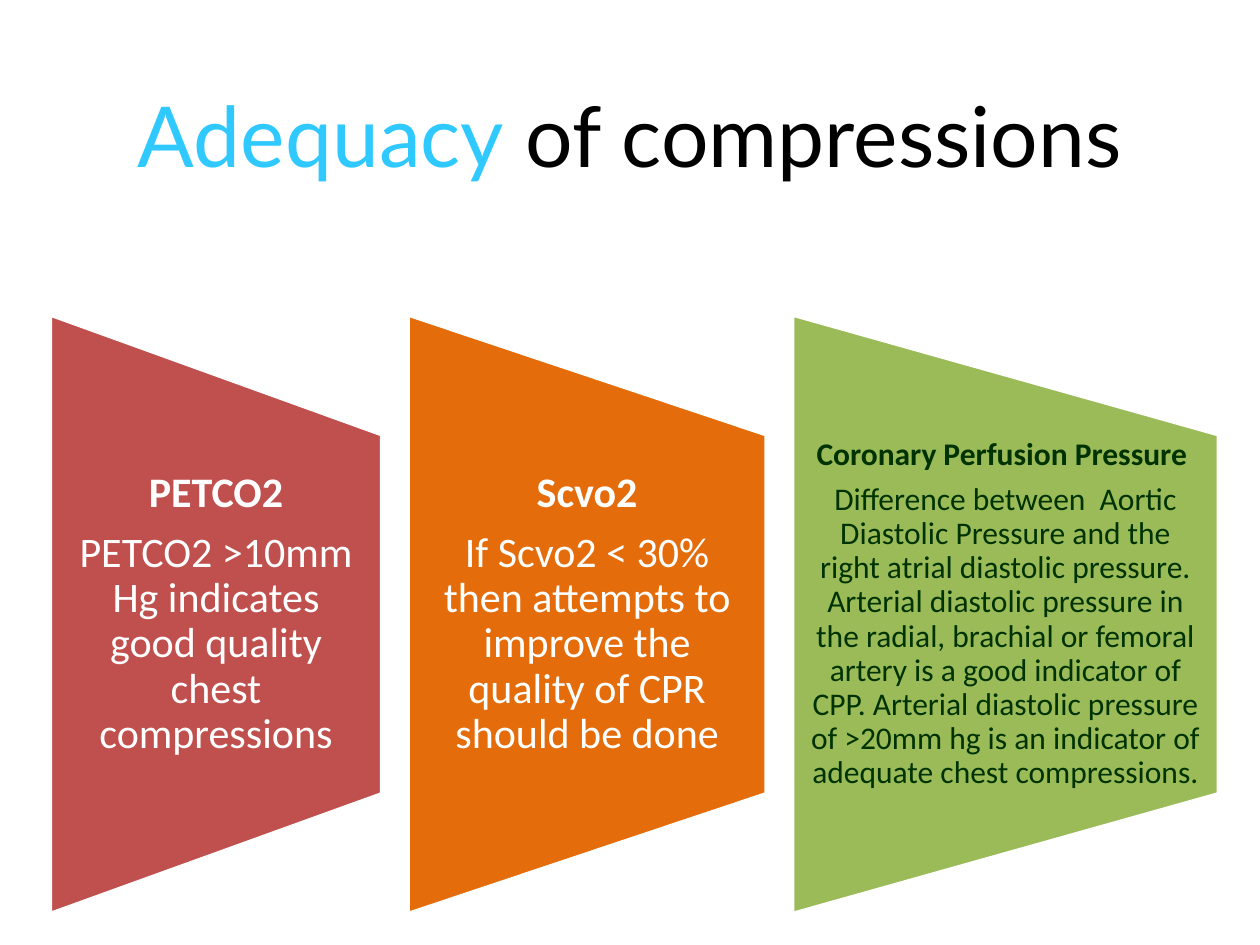
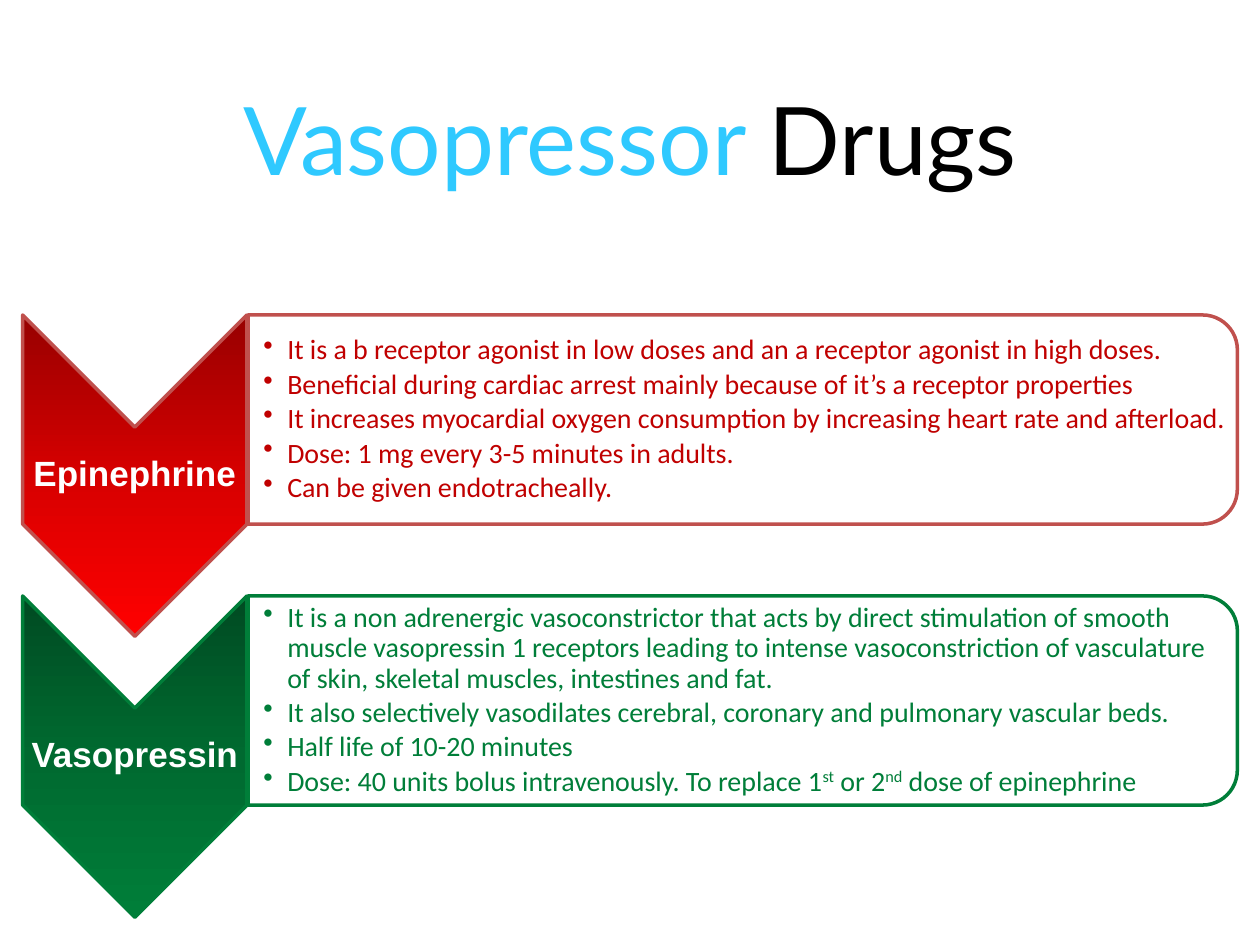
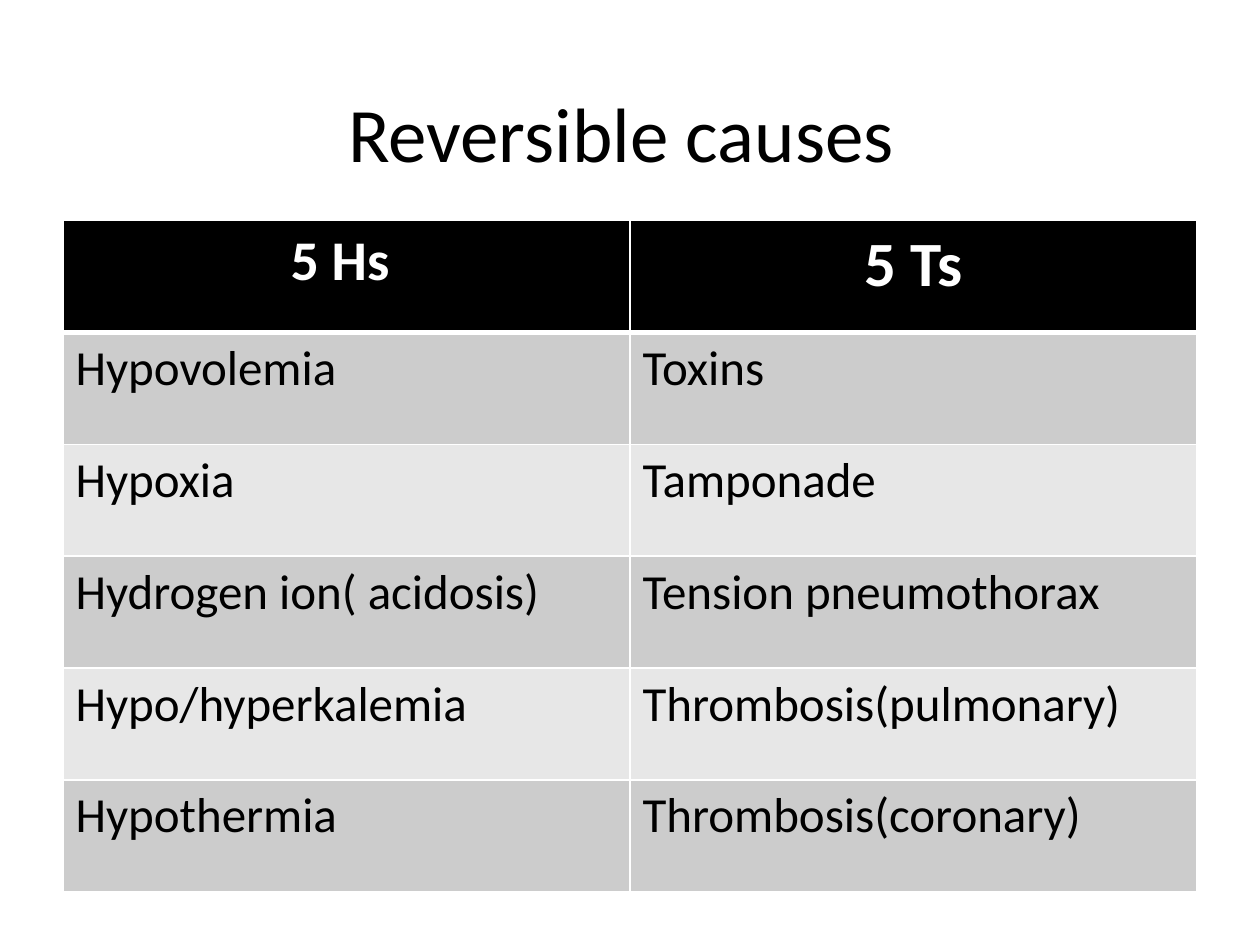
from copy import deepcopy

from lxml import etree
from pptx import Presentation
from pptx.dml.color import RGBColor
from pptx.enum.shapes import MSO_SHAPE
from pptx.enum.text import MSO_ANCHOR, PP_ALIGN
from pptx.oxml.ns import qn
from pptx.util import Inches, Pt

TRAPEZOID = MSO_SHAPE.FLOWCHART_MANUAL_OPERATION
CHEVRON = MSO_SHAPE.CHEVRON
ROUNDED_PANEL = MSO_SHAPE.ROUND_2_SAME_RECTANGLE
LEFT, CENTER = PP_ALIGN.LEFT, PP_ALIGN.CENTER
TOP, MIDDLE = MSO_ANCHOR.TOP, MSO_ANCHOR.MIDDLE


class Theme:
    accent = "2FC9FF"
    black, white = "000000", "FFFFFF"
    red, orange, lime = "C0504D", "E46C0A", "9BBB59"
    forest, crimson, green = "003300", "C00000", "007E39"
    red_fade = ("970000", "D70000", "FF0000")
    green_fade = ("004B22", "006A30", "007E39")
    stripes = ("E7E7E7", "CCCCCC")
    title_font, body_font, label_font = "Lato", "Calibri", "Arial"
    card, dense_card, drug, bullet = 24, 18, 20, 16
    left_header, right_header, cell = 32, 36, 28
    outline = 2


def write(frame, paragraphs, *, size, color, font=Theme.body_font, bold=False,
          align=LEFT, anchor=MIDDLE, margins=None, leading=None, after=0, bullet=False):
    """Fill a frame; a paragraph is a list of runs, each (text, overrides).

    Overrides are color, bold and superscript; after is a share of the type size.
    """
    frame.word_wrap = True
    frame.vertical_anchor = anchor
    if margins:
        (frame.margin_left, frame.margin_top,
         frame.margin_right, frame.margin_bottom) = map(Inches, margins)
    for index, runs in enumerate(paragraphs):
        paragraph = frame.add_paragraph() if index else frame.paragraphs[0]
        paragraph.alignment = align
        if leading:
            paragraph.line_spacing = leading
            paragraph.space_after = Pt(size * after)
        if bullet:
            properties = paragraph._p.get_or_add_pPr()
            properties.set("marL", str(Inches(0.19)))
            properties.set("indent", str(Inches(-0.19)))
            etree.SubElement(properties, qn("a:buChar")).set("char", "•")
        for text, overrides in runs:
            run = paragraph.add_run()
            run.text = text
            run.font.name = font
            run.font.size = Pt(size)
            run.font.bold = overrides.get("bold", bold)
            run.font.color.rgb = RGBColor.from_string(overrides.get("color", color))
            if overrides.get("superscript"):
                run.font._element.set("baseline", "30000")


def add_turned(slide, preset, left, top, width, height, rotation, fills, line):
    """Add a quarter-turned shape that covers the given box as seen on the slide."""
    shape = slide.shapes.add_shape(
        preset, Inches(left + (width - height) / 2), Inches(top + (height - width) / 2),
        Inches(height), Inches(width))
    shape.rotation = rotation
    shape.shadow.inherit = False
    shape.line.color.rgb = RGBColor.from_string(line)
    shape.line.width = Pt(Theme.outline)
    if len(fills) == 1:
        shape.fill.solid()
        shape.fill.fore_color.rgb = RGBColor.from_string(fills[0])
        return shape
    shape.fill.gradient()
    shape.fill.gradient_angle = 270
    gradient = shape._element.spPr.find(qn("a:gradFill"))
    gradient.set("rotWithShape", "0")
    stops = gradient.find(qn("a:gsLst"))
    stops.insert(1, deepcopy(stops[0]))
    stops[1].set("pos", "50000")
    for stop, color in zip(shape.fill.gradient_stops, fills):
        stop.color.rgb = RGBColor.from_string(color)
    return shape


deck = Presentation()
deck.slide_width, deck.slide_height = Inches(10), Inches(7.5)
blank = deck.slide_layouts[6]

# Slides and their titles
titles = [
    ((0, 0.43, 10, 1.26), Theme.title_font, 48,
     [("Adequacy", {"color": Theme.accent}), (" of compressions", {})]),
    ((1, 0.46, 8, 1.26), Theme.title_font, 54,
     [("Vasopressor ", {"color": Theme.accent}), ("Drugs", {})]),
    ((0.5, 0.42, 9, 1.25), Theme.body_font, 44, [("Reversible causes ", {})]),
]
slides = []
for box, font, size, runs in titles:
    slide = deck.slides.add_slide(blank)
    slides.append(slide)
    title = slide.shapes.add_textbox(*map(Inches, box))
    write(title.text_frame, [runs], size=size, color=Theme.black, font=font, align=CENTER)
adequacy, vasopressors, causes = slides

# Measures of adequate compressions
measures = [
    (2.63, Theme.red, Theme.white, Theme.card, 0.17, "PETCO2",
     "PETCO2 >10mm Hg indicates good quality chest compressions"),
    (2.84, Theme.orange, Theme.white, Theme.card, 0.17, "Scvo2",
     "If Scvo2 < 30% then attempts to improve the quality of CPR should be done"),
    (3.38, Theme.lime, Theme.forest, Theme.dense_card, 0.12, "Coronary Perfusion Pressure ",
     "Difference between  Aortic Diastolic Pressure and the right atrial diastolic pressure. "
     "Arterial diastolic pressure in the radial, brachial or femoral artery is a good "
     "indicator of CPP. Arterial diastolic pressure of >20mm hg is an indicator of "
     "adequate chest compressions."),
]
card_left, card_top, card_height, card_gap = 0.4, 2.5, 4.75, 0.21
for width, fill, ink, size, inset, heading, detail in measures:
    add_turned(adequacy, TRAPEZOID, card_left, card_top, width, card_height, 270,
               [fill], Theme.white)
    card_text = adequacy.shapes.add_textbox(
        Inches(card_left), Inches(card_top + card_height * 0.2),
        Inches(width), Inches(card_height * 0.6))
    write(card_text.text_frame, [[(heading, {"bold": True})], [(detail, {})]],
          size=size, color=ink, align=CENTER, margins=(inset, 0, inset, 0),
          leading=0.9, after=0.35)
    card_left += width + card_gap

# Vasopressor drugs
drugs = [
    ("Epinephrine", Theme.red_fade, Theme.red, Theme.crimson, [
        [("It is a b receptor agonist in low doses and an a receptor agonist in high doses.", {})],
        [("Beneficial during cardiac arrest mainly because of it’s a receptor properties", {})],
        [("It increases myocardial oxygen consumption by increasing heart rate and afterload.", {})],
        [("Dose: 1 mg every 3-5 minutes in adults.", {})],
        [("Can be given endotracheally.", {})],
    ]),
    ("Vasopressin", Theme.green_fade, Theme.green, Theme.green, [
        [("It is a non adrenergic vasoconstrictor that acts by direct stimulation of smooth "
          "muscle vasopressin 1 receptors leading to intense vasoconstriction of vasculature "
          "of skin, skeletal muscles, intestines and fat.", {})],
        [("It also selectively vasodilates cerebral, coronary and pulmonary vascular beds.", {})],
        [("Half life of 10-20 minutes", {})],
        [("Dose: 40 units bolus intravenously. To replace 1", {}), ("st", {"superscript": True}),
         (" or 2", {}), ("nd", {"superscript": True}), (" dose of epinephrine", {})],
    ]),
]
arrow_left, arrow_width, arrow_height = 0.18, 1.78, 2.55
panel_left, panel_width, panel_height, panel_inset = 1.97, 7.85, 1.66, 0.08
for row, (drug, fade, outline, ink, facts) in enumerate(drugs):
    top = 2.5 + row * 2.23
    add_turned(vasopressors, CHEVRON, arrow_left, top, arrow_width, arrow_height, 90,
               fade, outline)
    name = vasopressors.shapes.add_textbox(
        Inches(arrow_left), Inches(top + arrow_width / 2),
        Inches(arrow_width), Inches(arrow_height - arrow_width))
    write(name.text_frame, [[(drug, {})]], size=Theme.drug, color=Theme.white,
          font=Theme.label_font, bold=True, align=CENTER, margins=[0.01] * 4,
          leading=0.9, after=0.35)
    panel = add_turned(vasopressors, ROUNDED_PANEL, panel_left, top, panel_width,
                       panel_height, 90, [Theme.white], outline)
    panel_color = panel._element.spPr.find(qn("a:solidFill"))[0]
    etree.SubElement(panel_color, qn("a:alpha")).set("val", "90000")
    fact_list = vasopressors.shapes.add_textbox(
        Inches(panel_left), Inches(top + panel_inset),
        Inches(panel_width - panel_inset), Inches(panel_height - 2 * panel_inset))
    write(fact_list.text_frame, facts, size=Theme.bullet, color=ink,
          margins=(0.12, 0.01, 0.01, 0.01), leading=0.9, after=0.15, bullet=True)

# Reversible causes
cause_rows = [
    ("5 Hs ", "5 Ts"),
    ("Hypovolemia", "Toxins"),
    ("Hypoxia", "Tamponade"),
    ("Hydrogen ion( acidosis)", "Tension pneumothorax"),
    ("Hypo/hyperkalemia", "Thrombosis(pulmonary)"),
    ("Hypothermia", "Thrombosis(coronary)"),
]
table = causes.shapes.add_table(
    len(cause_rows), 2, Inches(0.5), Inches(1.75), Inches(9), Inches(5.33)).table
for row, pair in enumerate(cause_rows):
    header = row == 0
    for column, cause in enumerate(pair):
        cell = table.cell(row, column)
        for side in "LRTB":
            under_header = (row, side) in ((0, "B"), (1, "T"))
            border = etree.SubElement(cell._tc.get_or_add_tcPr(), qn(f"a:ln{side}"))
            border.set("w", str(Pt(3 if under_header else 1)))
            paint = etree.SubElement(border, qn("a:solidFill"))
            etree.SubElement(paint, qn("a:srgbClr")).set("val", Theme.white)
        cell.fill.solid()
        cell.fill.fore_color.rgb = RGBColor.from_string(
            Theme.black if header else Theme.stripes[row % 2])
        header_size = (Theme.left_header, Theme.right_header)[column]
        write(cell.text_frame, [[(cause, {})]], size=header_size if header else Theme.cell,
              color=Theme.white if header else Theme.black, bold=header,
              align=CENTER if header else LEFT, anchor=TOP)

deck.save("out.pptx")
